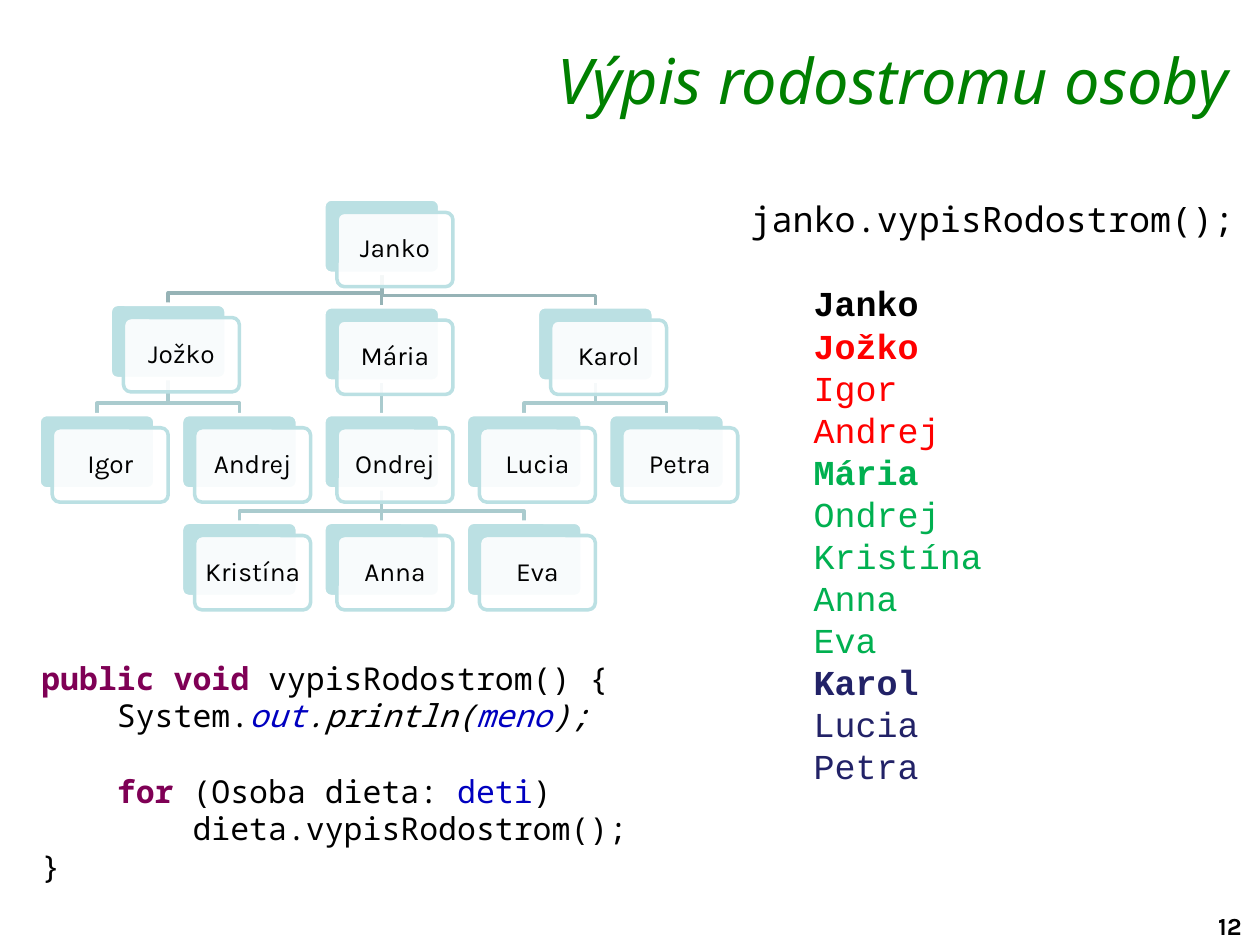
from pptx import Presentation
from pptx.dml.color import RGBColor
from pptx.enum.shapes import MSO_SHAPE as Shape
from pptx.enum.text import MSO_ANCHOR as Anchor, PP_ALIGN as Align
from pptx.oxml.ns import qn
from pptx.util import Inches, Pt
from lxml import etree

COLORS = {
    "black": "000000", "white": "FFFFFF", "title": "008000",
    "plate": "BBE0E3", "root_link": "96B3B6", "link": "AACBCE",
    "keyword": "7F0055", "field": "0000C0",
    "red": "FF0000", "green": "00B050", "navy": "222267",
}
MONO = "Noto Sans Mono"

# Family tree: name -> (column, row, parent)
FAMILY = {
    "Janko": (2, 0, None),
    "Jožko": (0.5, 1, "Janko"),
    "Igor": (0, 2, "Jožko"),
    "Andrej": (1, 2, "Jožko"),
    "Mária": (2, 1, "Janko"),
    "Ondrej": (2, 2, "Mária"),
    "Kristína": (1, 3, "Ondrej"),
    "Anna": (2, 3, "Ondrej"),
    "Eva": (3, 3, "Ondrej"),
    "Karol": (3.5, 1, "Janko"),
    "Lucia": (3, 2, "Karol"),
    "Petra": (4, 2, "Karol"),
}
BRANCH_COLORS = {"Janko": "black", "Jožko": "red", "Mária": "green", "Karol": "navy"}
COLUMN_STEP, ROW_STEP = Inches(1.13), Inches(0.855)
PLATE_W, PLATE_H = Inches(0.92), Inches(0.59)

# Code lines: each span is (text, colour, bold, italic)
CODE = [
    [("public void ", "keyword", True, False),
     ("vypisRodostrom() {", "black", False, False)],
    [("    System.", "black", False, False), ("out", "field", False, True),
     (".println(", "black", False, True), ("meno", "field", False, True),
     (");", "black", False, True)],
    [("    for ", "keyword", True, False),
     ("(Osoba dieta: ", "black", False, False),
     ("deti", "field", False, False), (")", "black", False, False)],
    [("        dieta.vypisRodostrom();", "black", False, False)],
    [("}", "black", False, False)],
]
LOOP_LINE = 2


def rgb(name):
    return RGBColor.from_string(COLORS[name])


def add_box(page, box):
    frame = page.shapes.add_textbox(*box).text_frame
    frame.word_wrap = True
    return frame


def next_para(frame, index):
    return frame.paragraphs[0] if index == 0 else frame.add_paragraph()


def add_span(para, text, font, size, color="black", bold=False, italic=False):
    span = para.add_run()
    span.text = text
    span.font.name, span.font.size = font, Pt(size)
    span.font.bold, span.font.italic = bold, italic
    span.font.color.rgb = rgb(color)


def add_title(page, box):
    frame = add_box(page, box)
    frame.margin_top = Inches(0.02)
    para = frame.paragraphs[0]
    para.alignment = Align.RIGHT
    add_span(para, "Výpis rodostromu osoby", "Noto Sans", 36, "title", italic=True)


def add_page_number(page, box):
    add_span(add_box(page, box).paragraphs[0], "12", "Karla", 14, bold=True)


def add_link(page, start, end, color):
    """Elbow from a parent plate down to a child plate."""
    bend = end[1] - Inches(0.09)
    builder = page.shapes.build_freeform(*start)
    if start[0] == end[0]:
        corners = [end]
    else:
        corners = [(start[0], bend), (end[0], bend), end]
    builder.add_line_segments(corners, close=False)
    link = builder.convert_to_shape()
    link.shadow.inherit = False
    link.fill.background()
    link.line.color.rgb = rgb(color)
    link.line.width = Pt(2)


def add_plate(page, left, top, fill, line):
    plate = page.shapes.add_shape(Shape.ROUNDED_RECTANGLE, left, top, PLATE_W, PLATE_H)
    plate.adjustments[0] = 0.1
    plate.shadow.inherit = False
    plate.fill.solid()
    plate.fill.fore_color.rgb = rgb(fill)
    plate.line.color.rgb = rgb(line)
    plate.line.width = Pt(2)
    return plate


def add_person(page, left, top, name):
    add_plate(page, left, top, "plate", "white")
    offset = Inches(0.105)
    card = add_plate(page, left + offset, top + offset, "white", "plate")
    # Slightly see-through card
    color = card.fill._xPr.find(qn("a:solidFill"))[0]
    etree.SubElement(color, qn("a:alpha")).set("val", "90000")
    frame = card.text_frame
    frame.word_wrap = False
    frame.vertical_anchor = Anchor.MIDDLE
    frame.margin_left = frame.margin_right = Inches(0.06)
    frame.margin_top = frame.margin_bottom = Inches(0.06)
    para = frame.paragraphs[0]
    para.alignment = Align.CENTER
    para.line_spacing = 0.9
    add_span(para, name, "Karla", 15)


def add_tree(page, box):
    left, top = box[:2]
    spots = {name: (left + int(column * COLUMN_STEP), top + row * ROW_STEP)
             for name, (column, row, _) in FAMILY.items()}
    # The first branch sits a little higher than its siblings
    spots["Jožko"] = (spots["Jožko"][0], spots["Jožko"][1] - Inches(0.02))

    for name, (_, row, parent) in FAMILY.items():
        if parent:
            x, y = spots[parent]
            child_x, child_y = spots[name]
            add_link(page, (x + PLATE_W // 2, y + PLATE_H),
                     (child_x + PLATE_W // 2, child_y),
                     "root_link" if row == 1 else "link")
    for name, spot in spots.items():
        add_person(page, *spot, name)


def add_code(page, box):
    frame = add_box(page, box)
    for index, line in enumerate(CODE):
        para = next_para(frame, index)
        para.line_spacing = Pt(21.5 if index else 23)
        if index == LOOP_LINE:
            para.space_before = Pt(21.5)
        for text, color, bold, italic in line:
            add_span(para, text, MONO, 18, color, bold, italic)


def add_output(page, box):
    frame = add_box(page, box)
    call = frame.paragraphs[0]
    call.line_spacing = Pt(27)
    add_span(call, "janko.vypisRodostrom();", MONO, 20)
    # Printed names, coloured by branch
    color = "black"
    for name in FAMILY:
        color = BRANCH_COLORS.get(name, color)
        para = frame.add_paragraph()
        para.level = 1
        para._p.get_or_add_pPr().set("marL", str(Inches(0.5)))
        para.line_spacing = Pt(24)
        if name == "Janko":
            para.space_before = Pt(24)
        add_span(para, name, "Courier New", 20, color, bold=name in BRANCH_COLORS)


def main():
    deck = Presentation()
    deck.slide_width, deck.slide_height = Inches(10), Inches(7.5)
    page = deck.slides.add_slide(deck.slide_layouts[6])
    regions = [
        (add_page_number, (9.57, 7.18, 0.51, 0.33)),
        (add_title, (2.29, 0.31, 7.55, 0.58)),
        (add_tree, (0.31, 1.58, 5.55, 3.26)),
        (add_code, (0.23, 5.16, 6.33, 1.92)),
        (add_output, (5.86, 1.48, 4.14, 5.15)),
    ]
    for add_region, box in regions:
        add_region(page, [Inches(length) for length in box])
    deck.save("out.pptx")


if __name__ == "__main__":
    main()
